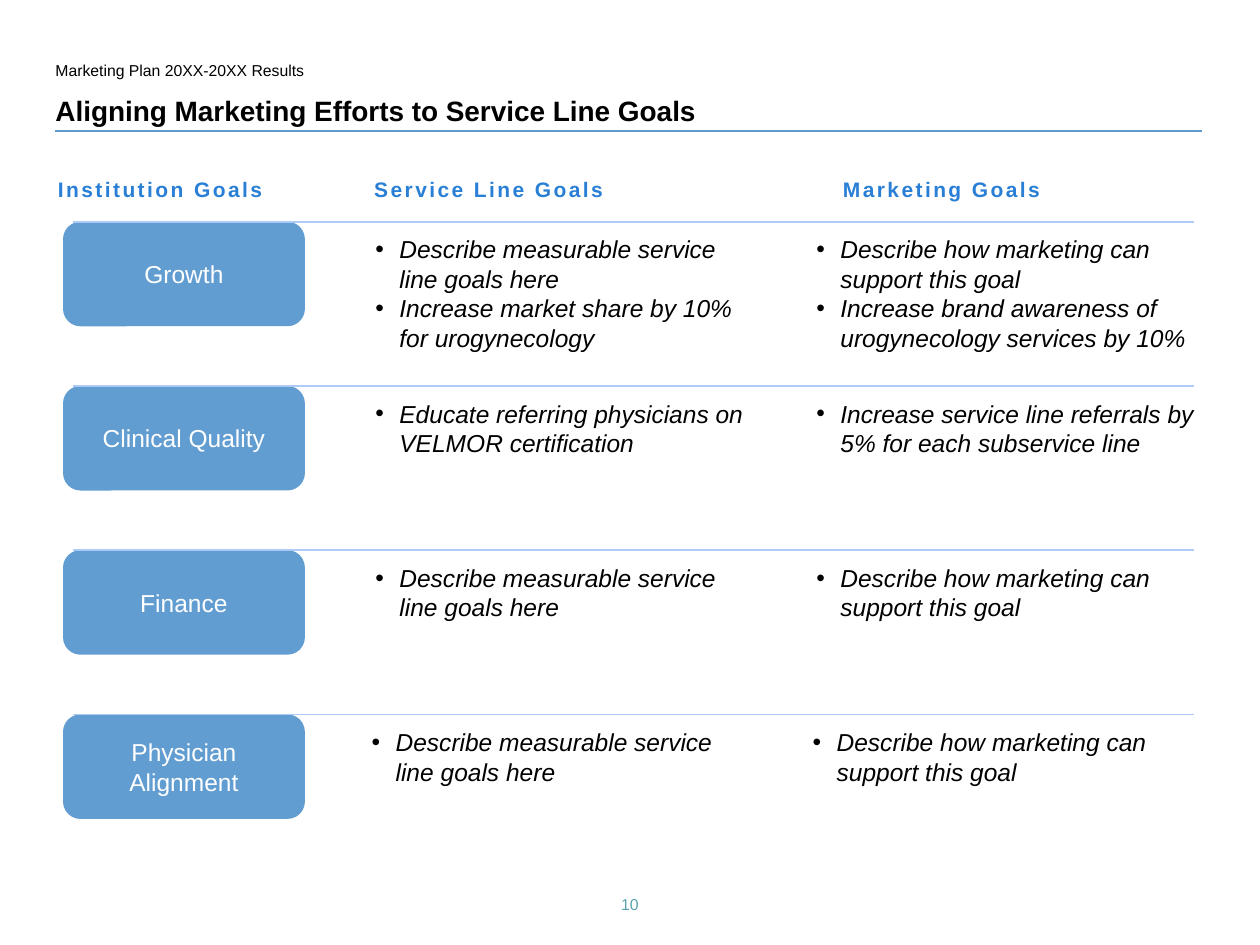
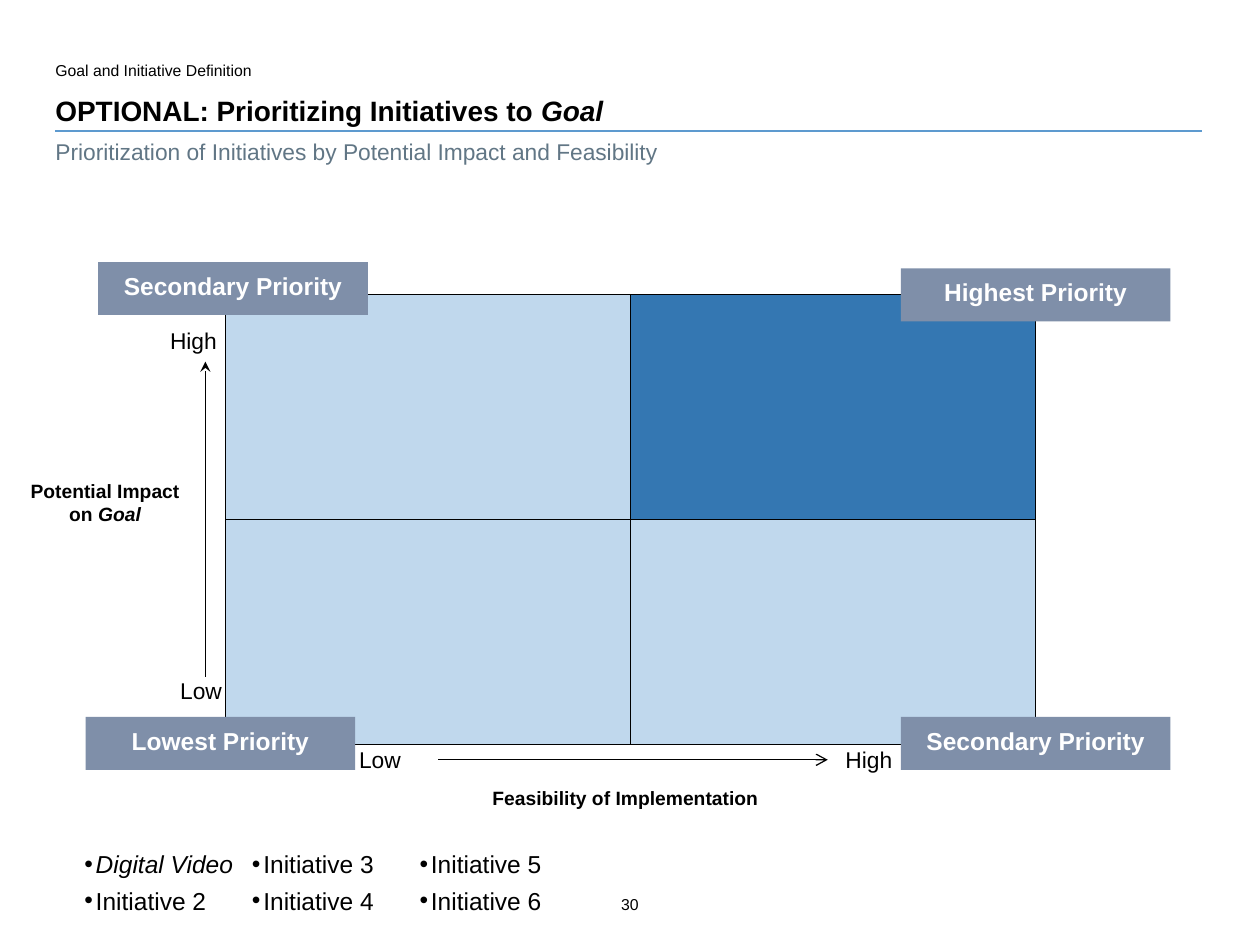
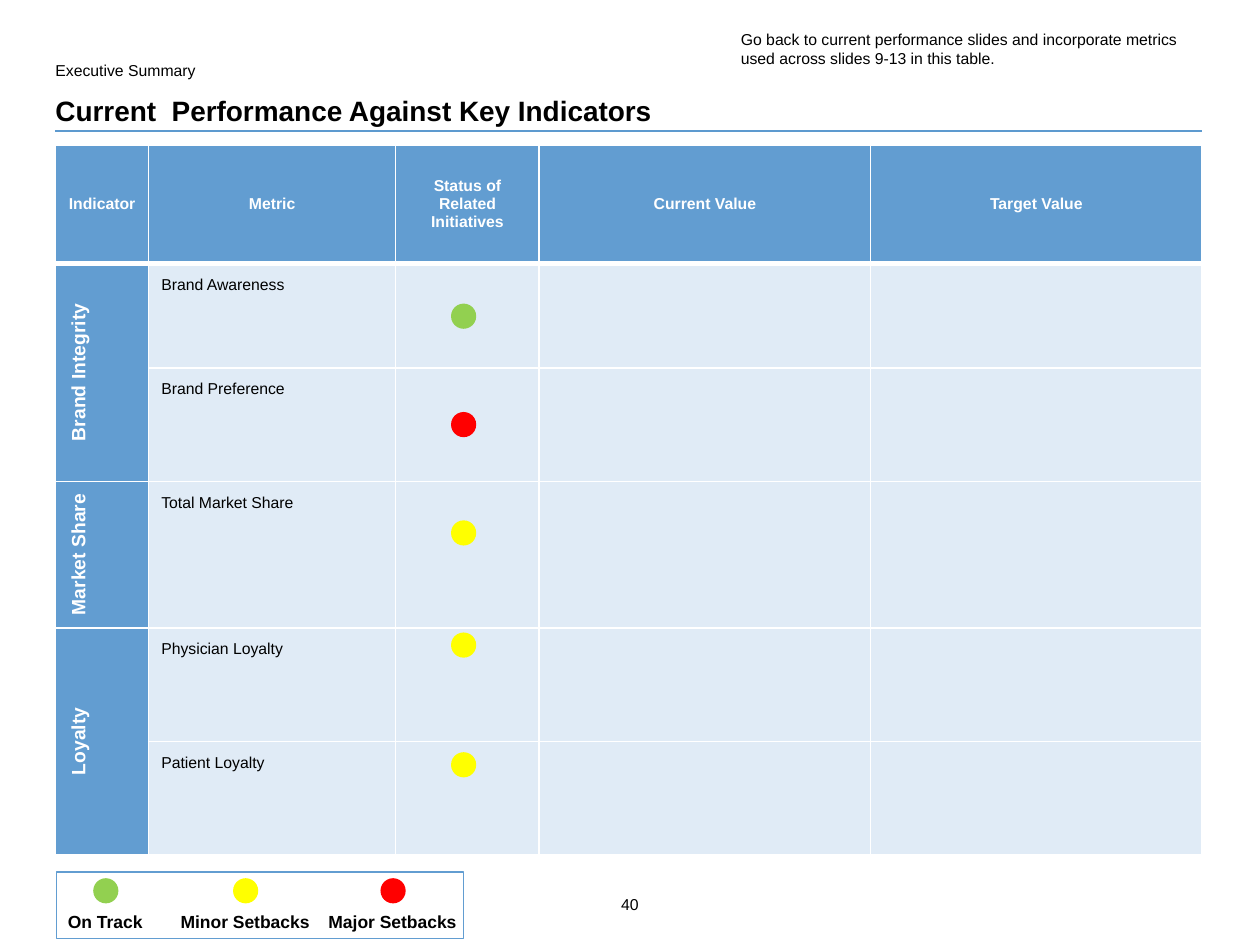
from dataclasses import dataclass, replace
from typing import NamedTuple

from lxml.etree import SubElement
from pptx import Presentation
from pptx.dml.color import RGBColor
from pptx.enum.shapes import MSO_CONNECTOR, MSO_SHAPE
from pptx.enum.text import MSO_ANCHOR, PP_ALIGN
from pptx.oxml.ns import qn
from pptx.util import Inches, Pt


@dataclass(frozen=True)
class Theme:
    font: str = "Arial"
    black: str = "000000"
    white: str = "FFFFFF"
    title_rule: str = "5D9ACF"
    page_teal: str = "5AA2AE"
    subtitle: str = "617685"
    heading: str = "297FD5"
    accent: str = "629DD1"
    row_rule: str = "ACCBF9"
    cell: str = "E0EBF6"
    matrix: str = "C0D8ED"
    matrix_top: str = "3477B2"
    tag: str = "7F8FA9"
    on_track: str = "92D050"
    minor: str = "FFFF00"
    major: str = "FF0000"
    small: int = 9
    legend: int = 10
    label: int = 11
    column: int = 12
    axis: int = 13
    body: int = 14
    title: int = 16


THEME = Theme()


class Box(NamedTuple):
    left: float
    top: float
    width: float
    height: float

    def inside(self, left, top, width, height):
        return Box(self.left + left, self.top + top, width, height)


@dataclass(frozen=True)
class Style:
    size: int
    color: str = THEME.black
    bold: bool = False
    italic: bool = False
    spacing: float = 0


SMALL = Style(THEME.small)
BODY = Style(THEME.body)
LABEL = Style(THEME.label, bold=True)
TAG = Style(THEME.body, THEME.white, bold=True)

# Insets: left, top, right, bottom
STANDARD = (0.1, 0.05, 0.1, 0.05)
ROOMY = (0.14, 0.07, 0.14, 0.07)
FLUSH = (0, 0.04, 0, 0.04)


# Shared drawing helpers

def write(frame, paragraphs, insets=STANDARD, align=PP_ALIGN.LEFT,
          anchor=MSO_ANCHOR.TOP, bullet_indent=0):
    """Fill a text frame; each paragraph is a list of (text, style) runs."""
    frame.word_wrap = True
    frame.vertical_anchor = anchor
    (frame.margin_left, frame.margin_top,
     frame.margin_right, frame.margin_bottom) = map(Inches, insets)
    for index, runs in enumerate(paragraphs):
        paragraph = frame.add_paragraph() if index else frame.paragraphs[0]
        write_runs(paragraph, runs, align)
        if bullet_indent:
            properties = paragraph._p.get_or_add_pPr()
            properties.set("marL", str(Inches(bullet_indent)))
            properties.set("indent", str(-Inches(bullet_indent)))
            SubElement(properties, qn("a:buFont"), typeface=THEME.font)
            SubElement(properties, qn("a:buChar"), char="•")


def write_runs(paragraph, runs, align):
    paragraph.alignment = align
    for text, style in runs:
        run = paragraph.add_run()
        run.text = text
        font = run.font
        font.name, font.size = THEME.font, Pt(style.size)
        font.bold, font.italic = style.bold, style.italic
        font.color.rgb = RGBColor.from_string(style.color)
        if style.spacing:
            run._r.get_or_add_rPr().set("spc", str(round(style.spacing * 100)))


def add_text(slide, box, paragraphs, **layout):
    shape = slide.shapes.add_textbox(*map(Inches, box))
    write(shape.text_frame, paragraphs, **layout)


def add_shape(slide, kind, box, fill=None, line=None, width=0.75):
    shape = slide.shapes.add_shape(kind, *map(Inches, box))
    shape.shadow.inherit = False
    if fill:
        shape.fill.solid()
        shape.fill.fore_color.rgb = RGBColor.from_string(fill)
    else:
        shape.fill.background()
    if line:
        shape.line.color.rgb = RGBColor.from_string(line)
        shape.line.width = Pt(width)
    else:
        shape.line.fill.background()
    return shape


def add_line(slide, start, end, color=THEME.black, width=0.75, arrow=None):
    connector = slide.shapes.add_connector(
        MSO_CONNECTOR.STRAIGHT, *map(Inches, (*start, *end)))
    connector.line.color.rgb = RGBColor.from_string(color)
    connector.line.width = Pt(width)
    if arrow:
        SubElement(connector.line._get_or_add_ln(), qn("a:tailEnd"), type=arrow)
    SubElement(connector._element.spPr, qn("a:effectLst"))


def add_light(slide, left, top, color):
    add_shape(slide, MSO_SHAPE.OVAL, Box(left, top, 0.2, 0.2), color)


def start_slide(presentation, section, title, page, page_color=THEME.black):
    """Blank slide with section line, title, rule and page number."""
    slide = presentation.slides.add_slide(presentation.slide_layouts[6])
    add_line(slide, (0.44, 1.04), (9.54, 1.04), THEME.title_rule)
    add_text(slide, Box(0.44, 0.44, 2.89, 0.2), [[(section, SMALL)]], insets=FLUSH)
    heading = Style(THEME.title, bold=True)
    runs = [(text, replace(heading, italic=italic)) for text, italic in title]
    add_text(slide, Box(0.44, 0.74, 9.09, 0.27), [runs], insets=(0, 0, 0, 0),
             anchor=MSO_ANCHOR.BOTTOM)
    add_text(slide, Box(4.66, 7.06, 0.68, 0.26),
             [[(page, replace(SMALL, color=page_color))]],
             insets=(0.04,) * 4, align=PP_ALIGN.CENTER)
    return slide


# Slide: goals side by side

GOAL_COLUMNS = [("Institution Goals", 0.32, 2.06), ("Service Line Goals", 2.83, 3.75),
                ("Marketing Goals", 6.55, 2.95)]
SERVICE_GOAL = "Describe measurable service line goals here"
MARKETING_GOAL = "Describe how marketing can support this goal"
# Name, service line goals, marketing goals, shift of the goal texts
GOAL_ROWS = [
    ("Growth",
     [SERVICE_GOAL, "Increase market share by 10% for urogynecology"],
     [MARKETING_GOAL, "Increase brand awareness of urogynecology services by 10%"], 0),
    ("Clinical Quality",
     ["Educate referring physicians on VELMOR certification"],
     ["Increase service line referrals by 5% for each subservice line"], 0),
    ("Finance", [SERVICE_GOAL], [MARKETING_GOAL], 0),
    ("Physician Alignment", [SERVICE_GOAL], [MARKETING_GOAL], -0.03),
]


def add_goal_row(slide, box, name, service_goals, marketing_goals, shift):
    button = add_shape(slide, MSO_SHAPE.ROUNDED_RECTANGLE,
                       box.inside(0, 0, 1.92, 0.83), THEME.accent)
    write(button.text_frame, [[(name, replace(BODY, color=THEME.white))]],
          align=PP_ALIGN.CENTER, anchor=MSO_ANCHOR.MIDDLE)
    add_line(slide, (box.left + 0.08, box.top), (box.left + box.width, box.top),
             THEME.row_rule, 1)
    for left, goals in ((2.33, service_goals), (5.83, marketing_goals)):
        panel = add_shape(slide, MSO_SHAPE.ROUNDED_RECTANGLE,
                          box.inside(left + shift, 0, 3.33, 1.06))
        write(panel.text_frame, [[(goal, replace(BODY, italic=True))] for goal in goals],
              bullet_indent=0.19)


def build_goals_slide(presentation):
    slide = start_slide(presentation, "Marketing Plan 20XX-20XX Results",
                        [("Aligning Marketing Efforts to Service Line Goals", False)],
                        "10", THEME.page_teal)
    column_style = Style(THEME.column, THEME.heading, bold=True, spacing=1.4)
    for text, left, width in GOAL_COLUMNS:
        header = add_shape(slide, MSO_SHAPE.RECTANGLE, Box(left, 1.33, width, 0.33),
                           THEME.white)
        write(header.text_frame, [[(text, column_style)]], insets=(0.14, 0.07, 0.14, 0.14))
    for index, row in enumerate(GOAL_ROWS):
        add_goal_row(slide, Box(0.5, 1.76 + 3.91 / 3 * index, 8.98, 1.06), *row)


# Slide: priority matrix

def add_matrix(slide, box):
    half_width, half_height = box.width / 2, box.height / 2
    middle, center = box.left + half_width, box.top + half_height
    add_shape(slide, MSO_SHAPE.RECTANGLE, box, THEME.matrix, THEME.black)
    add_shape(slide, MSO_SHAPE.RECTANGLE,
              box.inside(half_width, 0, half_width, half_height),
              THEME.matrix_top, THEME.black)
    add_line(slide, (middle, box.top), (middle, box.top + box.height), width=0.5)
    add_line(slide, (box.left, center), (box.left + box.width, center), width=0.5)


def add_priority_tag(slide, box, text):
    add_shape(slide, MSO_SHAPE.RECTANGLE, box, THEME.tag)
    add_text(slide, box.inside(-0.1, 0.02, box.width + 0.2, 0.34), [[(text, TAG)]],
             align=PP_ALIGN.CENTER)


def add_axes(slide, box):
    """Arrows, end labels and names around the matrix box."""
    axis_style = Style(THEME.axis)
    add_line(slide, (box.left - 0.16, box.top + 3.03), (box.left - 0.16, box.top + 0.53),
             arrow="stealth")
    add_line(slide, (box.left + 1.69, box.top + 3.69), (box.left + 4.78, box.top + 3.69),
             arrow="arrow")
    for text, left, top in (("Low", -0.5, 2.96), ("High", -0.58, 0.18),
                            ("Low", 0.92, 3.51), ("High", 4.78, 3.51)):
        add_text(slide, box.inside(left, top, 0.77, 0.36), [[(text, axis_style)]],
                 insets=ROOMY)
    add_text(slide, box.inside(-1.79, 1.39, 1.67, 0.51),
             [[("Potential Impact on ", LABEL), ("Goal", replace(LABEL, italic=True))]],
             insets=ROOMY, align=PP_ALIGN.CENTER)
    add_text(slide, box.inside(1.31, 3.83, 3.73, 0.33),
             [[("Feasibility of Implementation", LABEL)]],
             insets=ROOMY, align=PP_ALIGN.CENTER)


def add_initiatives(slide, box, names):
    """Two rows, filled column by column."""
    for index, name in enumerate(names):
        column, row = divmod(index, 2)
        style = replace(BODY, italic=index == 0)
        add_text(slide, box.inside(1.33 * column, 0.29 * row, 1.77, 0.38),
                 [[(name, style)]], insets=ROOMY, bullet_indent=0.09)


def build_priority_slide(presentation):
    slide = start_slide(presentation, "Goal and Initiative Definition",
                        [("OPTIONAL: Prioritizing Initiatives to ", False), ("Goal", True)],
                        "30")
    subtitle = "Prioritization of Initiatives by Potential Impact and Feasibility"
    add_text(slide, Box(0.44, 1.05, 9.09, 0.3),
             [[(subtitle, Style(THEME.axis, THEME.subtitle))]], insets=FLUSH)
    matrix = Box(1.79, 2.34, 6.43, 3.57)
    add_matrix(slide, matrix)
    for text, left, top in (("Lowest Priority", 0.68, 5.69), ("Highest Priority", 7.15, 2.13),
                            ("Secondary Priority", 7.15, 5.69),
                            ("Secondary Priority", 0.78, 2.08)):
        add_priority_tag(slide, Box(left, top, 2.14, 0.42), text)
    add_axes(slide, matrix)
    add_initiatives(slide, Box(0.53, 6.67, 4.42, 0.67),
                    ["Digital Video"] + [f"Initiative {number}" for number in range(2, 7)])


# Slide: key indicators

INDICATOR_HEADERS = ["Indicator", "Metric", "Status of Related Initiatives",
                     "Current Value", "Target Value"]
COLUMN_WIDTHS = [0.74, 1.96, 1.14, 2.63, 2.63]
ROW_HEIGHTS = [0.94, 0.83, 0.9, 0.9, 0.9, 0.9]
# Indicator and its metrics
INDICATORS = [("Brand Integrity", ["Brand Awareness", "Brand Preference"]),
              ("Market Share", ["Total Market Share"]),
              ("Loyalty", ["Physician Loyalty", "Patient Loyalty"])]
STATUS_LIGHTS = [(2.41, THEME.on_track), (3.27, THEME.major), (4.13, THEME.minor),
                 (5.02, THEME.minor), (5.97, THEME.minor)]
LEGEND = [("On Track", THEME.on_track, -0.28), ("Minor Setbacks", THEME.minor, 0.83),
          ("Major Setbacks", THEME.major, 2.0)]


def format_cell(cell, fill, bottom_width=1):
    properties = cell._tc.get_or_add_tcPr()
    for side, width in (("L", 1), ("R", 1), ("T", 1), ("B", bottom_width)):
        border = SubElement(properties, qn(f"a:ln{side}"), w=str(Pt(width)))
        solid = SubElement(border, qn("a:solidFill"))
        SubElement(solid, qn("a:srgbClr"), val=THEME.white)
    cell.fill.solid()
    cell.fill.fore_color.rgb = RGBColor.from_string(fill)


def write_cell(cell, text, style, centered=False):
    cell.margin_left = cell.margin_right = Inches(0.1)
    cell.margin_top = cell.margin_bottom = Inches(0.1)
    cell.vertical_anchor = MSO_ANCHOR.MIDDLE if centered else MSO_ANCHOR.TOP
    write_runs(cell.text_frame.paragraphs[0], [(text, style)],
               PP_ALIGN.CENTER if centered else PP_ALIGN.LEFT)


def add_indicator_table(slide, box):
    table = slide.shapes.add_table(len(ROW_HEIGHTS), len(COLUMN_WIDTHS),
                                   *map(Inches, box)).table
    for column, width in zip(table.columns, COLUMN_WIDTHS):
        column.width = Inches(width)
    for row, height in zip(table.rows, ROW_HEIGHTS):
        row.height = Inches(height)
    for row_index, row in enumerate(table.rows):
        for column_index, cell in enumerate(row.cells):
            is_header = row_index == 0
            format_cell(cell, THEME.accent if is_header or column_index == 0 else THEME.cell,
                        3 if is_header else 1)
    # Header row
    header_style = Style(THEME.small, THEME.white, bold=True)
    for column_index, text in enumerate(INDICATOR_HEADERS):
        write_cell(table.cell(0, column_index), text, header_style, centered=True)
    # Indicators with their metrics
    first_row = 1
    for indicator, metrics in INDICATORS:
        cell = table.cell(first_row, 0)
        if len(metrics) > 1:
            cell.merge(table.cell(first_row + len(metrics) - 1, 0))
        write_cell(cell, indicator, replace(LABEL, color=THEME.white), centered=True)
        cell._tc.get_or_add_tcPr().set("vert", "vert270")
        for offset, metric in enumerate(metrics):
            write_cell(table.cell(first_row + offset, 1), metric, SMALL)
        first_row += len(metrics)


def add_legend(slide, box):
    for text, color, left in LEGEND:
        label = box.inside(left, 0.26, 1.33, 0.27)
        add_text(slide, label, [[(text, Style(THEME.legend, bold=True))]],
                 align=PP_ALIGN.CENTER, anchor=MSO_ANCHOR.MIDDLE)
        add_light(slide, label.left + 0.57, box.top + 0.05, color)
    add_shape(slide, MSO_SHAPE.RECTANGLE, box, line=THEME.accent)


def build_indicator_slide(presentation):
    slide = start_slide(presentation, "Executive Summary",
                        [("Current  Performance Against Key Indicators", False)], "40")
    add_indicator_table(slide, Box(0.44, 1.15, 9.09, 5.36))
    for top, color in STATUS_LIGHTS:
        add_light(slide, 3.58, top, color)
    add_legend(slide, Box(0.45, 6.92, 3.23, 0.53))
    reminder = ("Go back to current performance slides and incorporate metrics "
                "used across slides 9-13 in this table.")
    add_text(slide, Box(5.83, 0.19, 3.58, 0.4), [[(reminder, SMALL)]], insets=(0.05,) * 4)


def main():
    presentation = Presentation()
    presentation.slide_width, presentation.slide_height = Inches(10), Inches(7.5)
    build_goals_slide(presentation)
    build_priority_slide(presentation)
    build_indicator_slide(presentation)
    presentation.save("out.pptx")


if __name__ == "__main__":
    main()
